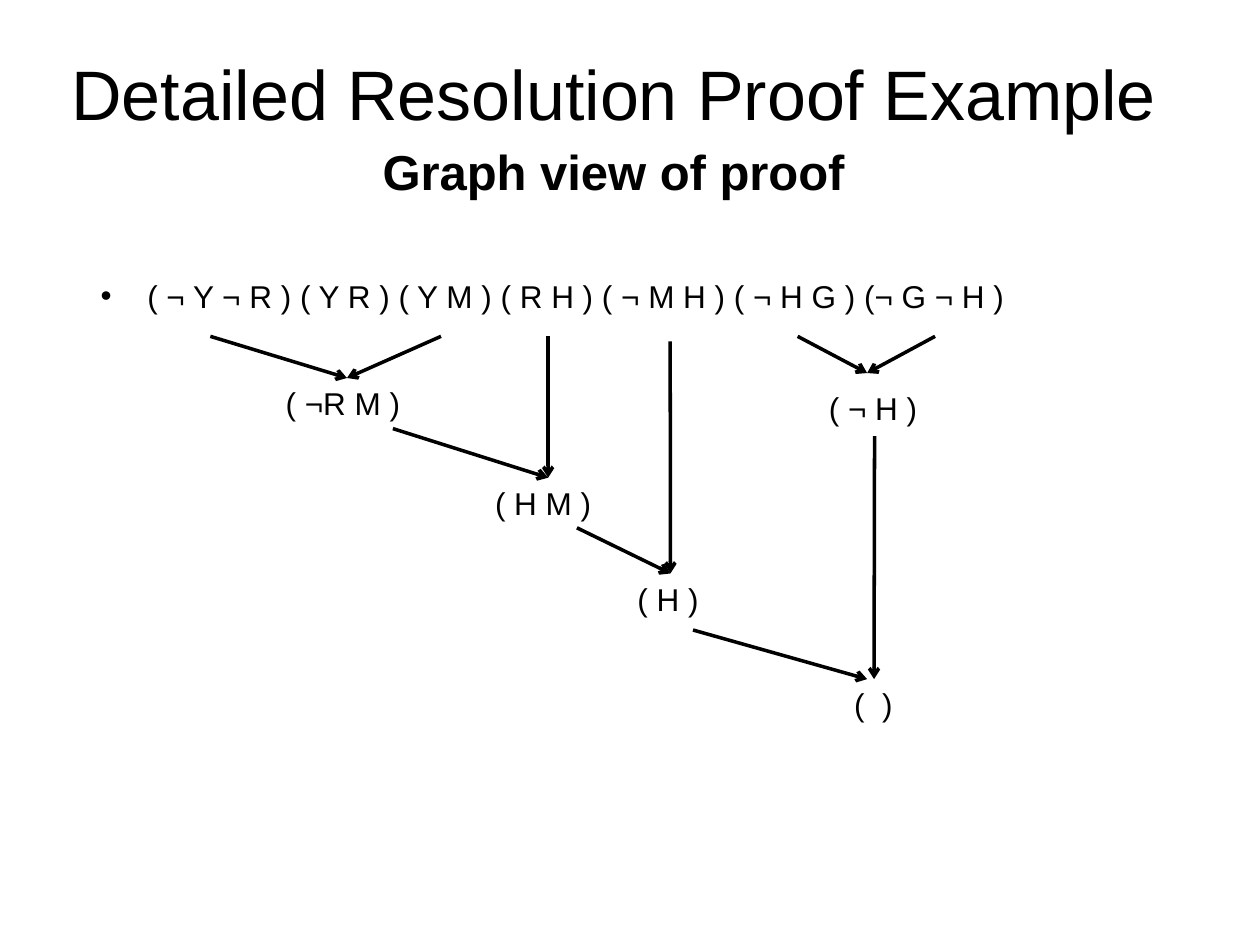
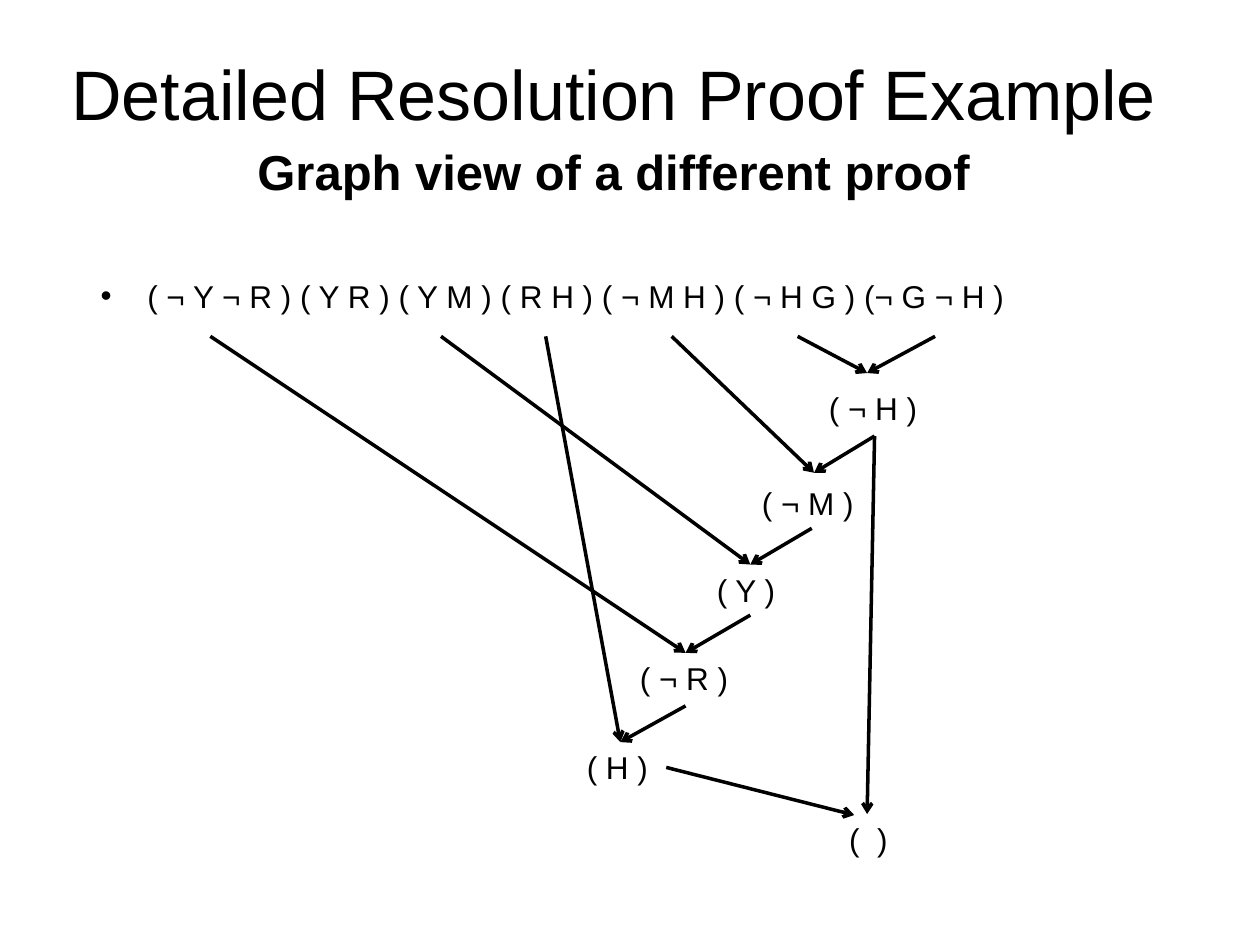
"""Build two slides that show resolution proofs as graphs."""
import pptx
import pptx.util
import pptx.dml.color
import pptx.enum.shapes
import pptx.enum.text
import pptx.oxml
import pptx.oxml.ns
from pptx.util import Cm, Pt

THEME = {
    "font": "Arial",
    "ink": pptx.dml.color.RGBColor(0, 0, 0),
    "paper": pptx.dml.color.RGBColor(255, 255, 255),
    "title": 40, "subtitle": 28, "body": 18, "line": 2,
}
SLIDE = (25.4, 19.05)
TITLE_BOX = (0.84, 0.84, 23.06, 3.38)
CLAUSE_BOX = (1.78, 5.46, 22.23, 1.7)
HANG = 0.94
TOP, LEFT, BOTTOM, RIGHT = range(4)

TITLE = "Detailed Resolution Proof Example"
CLAUSES = "( ¬ Y ¬ R ) ( Y R ) ( Y M ) ( R H ) ( ¬ M H ) ( ¬ H G ) (¬ G ¬ H )"

ROW = 6.78
FROM_NOT_Y_NOT_R, FROM_Y_M = (4.24, ROW), (8.89, ROW)
OVER_NOT_H, OVER_NOT_M = (17.48, 7.52), (16.41, 9.53)

SHARED_NODES = {"not_h": ("( ¬ H )", 16.46, 7.72, 2.34, 1.07)}
SHARED_ARROWS = [
    ((18.85, ROW), OVER_NOT_H),
    ((16.08, ROW), OVER_NOT_H),
]

PROOFS = [
    {
        "subtitle": "Graph view of proof",
        "nodes": {
            "not_r_m": ("( ¬R M )", 5.51, 7.62, 2.97, 1.02),
            "h_m": ("( H M )", 9.73, 9.63, 2.64, 1.02),
            "h": ("( H )", 12.6, 11.56, 1.83, 1.07),
            "empty": ("(  )", 16.97, 13.69, 1.3, 1.02),
        },
        "arrows": [
            (FROM_NOT_Y_NOT_R, ("not_r_m", TOP)),
            (FROM_Y_M, ("not_r_m", TOP)),
            ((11.05, ROW), ("h_m", TOP)),
            ((7.92, 8.64), ("h_m", TOP)),
            ((13.51, 6.88), ("h", TOP)),
            ((11.63, 10.64), ("h", TOP)),
            (("not_h", BOTTOM), ("empty", TOP)),
            ((13.97, 12.7), (17.48, 13.69)),
        ],
    },
    {
        "subtitle": "Graph view of a different proof",
        "nodes": {
            "not_m": ("( ¬ M )", 15.11, 9.63, 2.51, 1.02),
            "y": ("( Y )", 14.2, 11.38, 1.85, 1.02),
            "not_r": ("( ¬ R )", 12.65, 13.16, 2.34, 1.07),
            "h": ("( H )", 11.58, 14.96, 1.85, 1.02),
            "empty": ("(  )", 16.87, 16.41, 1.85, 1.02),
        },
        "arrows": [
            (("not_h", BOTTOM), OVER_NOT_M),
            ((13.54, ROW), OVER_NOT_M),
            (FROM_Y_M, ("y", TOP)),
            (("not_m", BOTTOM), ("y", TOP)),
            (("y", BOTTOM), ("not_r", TOP)),
            (FROM_NOT_Y_NOT_R, ("not_r", TOP)),
            (("not_r", BOTTOM), ("h", TOP)),
            ((11, ROW), ("h", TOP)),
            (("not_h", BOTTOM), (17.48, 16.41)),
            (("h", RIGHT), (17.22, 16.43)),
        ],
    },
]


def apply(target, formats):
    for name, value in formats.items():
        setattr(target, name, value)


def add_child(parent, tag, **attributes):
    child = pptx.oxml.parse_xml(f"<{tag} {pptx.oxml.ns.nsdecls('a')}/>")
    for name, value in attributes.items():
        child.set(name, value)
    parent.append(child)
    return child


def add_text(s, box, lines, paragraph=None, frame=None):
    sp = s.shapes.add_textbox(*map(Cm, box))
    tf = sp.text_frame
    apply(tf, {"word_wrap": True, **(frame or {})})
    for i, (text, size, bold) in enumerate(lines):
        p = tf.add_paragraph() if i else tf.paragraphs[0]
        apply(p, paragraph or {})
        r = p.add_run()
        r.text = text
        apply(r.font, {"name": THEME["font"], "size": Pt(size), "bold": bold})
        r.font.color.rgb = THEME["ink"]
    return sp


def add_bullet(p):
    pPr = p._p.get_or_add_pPr()
    pPr.set("marL", str(Cm(HANG)))
    pPr.set("indent", str(-Cm(HANG)))
    add_child(add_child(pPr, "a:buClr"), "a:srgbClr", val=str(THEME["ink"]))
    add_child(pPr, "a:buFont", typeface=THEME["font"])
    add_child(pPr, "a:buChar", char="•")


def add_arrow(s, nodes, start, end):
    points = [(0, 0) if e[0] in nodes else e for e in (start, end)]
    cx = s.shapes.add_connector(
        pptx.enum.shapes.MSO_CONNECTOR.STRAIGHT,
        *(Cm(v) for point in points for v in point))
    for (node, side), connect in ((start, cx.begin_connect), (end, cx.end_connect)):
        if node in nodes:
            connect(nodes[node], side)
    cx.line.color.rgb = THEME["ink"]
    cx.line.width = Pt(THEME["line"])
    add_child(cx.line._get_or_add_ln(), "a:tailEnd", type="arrow")
    add_child(cx._element.spPr, "a:effectLst")


def add_proof(prs, proof):
    s = prs.slides.add_slide(prs.slide_layouts[6])
    s.background.fill.solid()
    s.background.fill.fore_color.rgb = THEME["paper"]
    add_text(
        s, TITLE_BOX,
        [(TITLE, THEME["title"], False), (proof["subtitle"], THEME["subtitle"], True)],
        {"alignment": pptx.enum.text.PP_ALIGN.CENTER, "space_before": Pt(4.5)},
        {"vertical_anchor": pptx.enum.text.MSO_ANCHOR.MIDDLE})
    sp = add_text(s, CLAUSE_BOX, [(CLAUSES, THEME["body"], False)],
                  {"space_before": Pt(4)})
    add_bullet(sp.text_frame.paragraphs[0])
    node_frame = {"margin_right": 0,
                  "auto_size": pptx.enum.text.MSO_AUTO_SIZE.SHAPE_TO_FIT_TEXT}
    nodes = {
        key: add_text(s, box, [(text, THEME["body"], False)], frame=node_frame)
        for key, (text, *box) in {**SHARED_NODES, **proof["nodes"]}.items()
    }
    for start, end in SHARED_ARROWS + proof["arrows"]:
        add_arrow(s, nodes, start, end)


def main():
    prs = pptx.Presentation()
    prs.slide_width, prs.slide_height = map(Cm, SLIDE)
    for proof in PROOFS:
        add_proof(prs, proof)
    prs.save("out.pptx")


if __name__ == "__main__":
    main()
